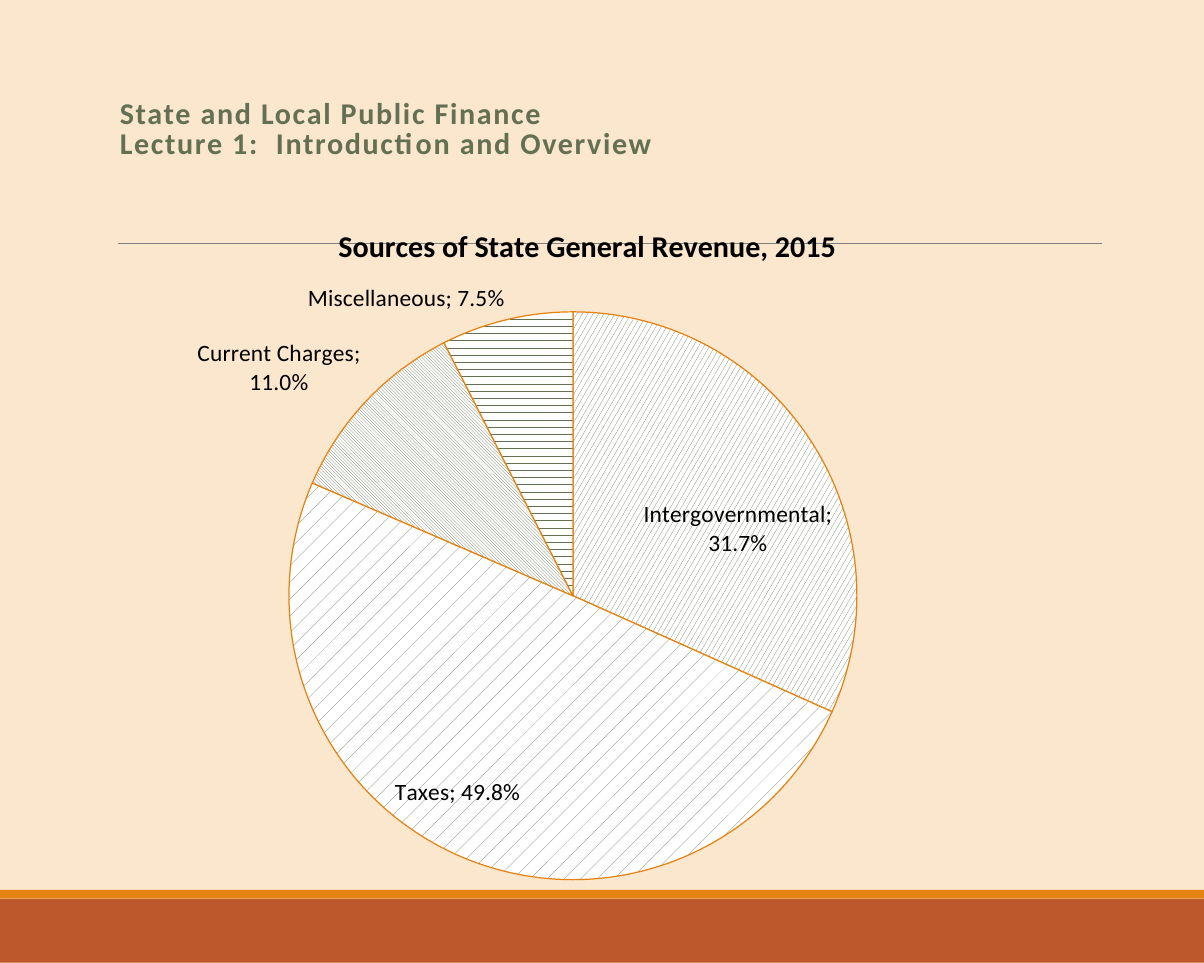
from pptx import Presentation
from pptx.chart.data import CategoryChartData
from pptx.dml.color import RGBColor
from pptx.enum.chart import XL_CHART_TYPE, XL_LABEL_POSITION
from pptx.enum.dml import MSO_PATTERN
from pptx.enum.shapes import MSO_CONNECTOR, MSO_SHAPE
from pptx.enum.text import MSO_ANCHOR
from pptx.oxml import parse_xml
from pptx.oxml.ns import nsdecls, qn
from pptx.util import Inches, Pt

PIE = XL_CHART_TYPE.PIE
OUTSIDE = XL_LABEL_POSITION.OUTSIDE_END
STRAIGHT = MSO_CONNECTOR.STRAIGHT
RECT = MSO_SHAPE.RECTANGLE
BOTTOM = MSO_ANCHOR.BOTTOM

EMU_PER_PX = 914400 / 120.4
WIDTH, HEIGHT = 1204, 963
GREEN, ORANGE, RUST = "637052", "E48312", "BD582C"

# category, share, pattern, label offset from the slice centre (None: outside)
SLICES = [
    ("Intergovernmental", 0.317, MSO_PATTERN.LARGE_CONFETTI, (46, 10)),
    ("Taxes", 0.498, MSO_PATTERN.PERCENT_5, (-58, 67)),
    ("Current Charges", 0.11, MSO_PATTERN.DARK_DOWNWARD_DIAGONAL, None),
    ("Miscellaneous", 0.075, MSO_PATTERN.DASHED_HORIZONTAL, None),
]


def px(n):
    return round(n * EMU_PER_PX)


def rgb(value):
    return RGBColor.from_string(value)


def layout_xml(**values):
    """Manual chart layout; keywords are the c: element names, in schema order."""
    items = "".join(f'<c:{k} val="{v}"/>' for k, v in values.items())
    return f'<c:layout {nsdecls("c")}><c:manualLayout>{items}</c:manualLayout></c:layout>'


def set_layout(parent, index, **values):
    for old in parent.findall(qn("c:layout")):
        parent.remove(old)
    parent.insert(index, parse_xml(layout_xml(**values)))


class Deck:
    def __init__(self, slide, font):
        self.slide = slide
        self.font = font

    def background(self, color):
        fill = self.slide.background.fill
        fill.solid()
        fill.fore_color.rgb = rgb(color)

    def band(self, x, y, w, h, color):
        s = self.slide.shapes.add_shape(RECT, px(x), px(y), px(w), px(h))
        s.shadow.inherit = False
        s.fill.solid()
        s.fill.fore_color.rgb = rgb(color)
        s.line.fill.background()

    def rule(self, x1, x2, y, color, width):
        s = self.slide.shapes.add_connector(STRAIGHT, px(x1), px(y), px(x2), px(y))
        s.line.color.rgb = rgb(color)
        s.line.width = Pt(width)
        s._element.spPr.append(parse_xml(f'<a:effectLst {nsdecls("a")}/>'))

    def style(self, font, size, color, bold=False):
        font.name = self.font
        font.size = Pt(size)
        font.bold = bold
        font.color.rgb = rgb(color)

    def heading(self, x, y, w, h, text, size, color):
        tf = self.slide.shapes.add_textbox(px(x), px(y), px(w), px(h)).text_frame
        tf.word_wrap = True
        tf.vertical_anchor = BOTTOM
        p = tf.paragraphs[0]
        p.text = text
        p.line_spacing = 0.85
        for r in p.runs:
            self.style(r.font, size, color, bold=True)
            r.font._element.set("spc", "100")

    def pie(self, x, y, w, h, title, slices, title_at, plot_box):
        """Pie chart; title_at and plot_box are slide positions in px."""
        data = CategoryChartData(number_format="0.0%")
        data.categories = [name for name, *_ in slices]
        data.add_series("Series 1", [share for _, share, *_ in slices])
        frame = self.slide.shapes.add_chart(PIE, px(x), px(y), px(w), px(h), data)
        chart = frame.chart
        self.style(chart.font, 10, "000000")
        chart.has_legend = False

        chart.has_title = True
        tf = chart.chart_title.text_frame
        tf.text = title
        self.style(tf.paragraphs[0].runs[0].font, 18, "000000", bold=True)
        tx, ty = title_at
        set_layout(chart.chart_title._element, 1, xMode="edge", yMode="edge",
                   x=round((tx - x) / w, 4), y=round((ty - y) / h, 4))

        bx, by, bw, bh = plot_box
        plot_area = chart._chartSpace.chart.plotArea
        set_layout(plot_area, 0, layoutTarget="inner", xMode="edge", yMode="edge",
                   x=round((bx - x) / w, 4), y=round((by - y) / h, 4),
                   w=round(bw / w, 4), h=round(bh / h, 4))

        series = chart.plots[0].series[0]
        labels = series.data_labels
        self.style(labels.font, 14, "000000")
        labels.number_format = "0.0%"
        labels.number_format_is_linked = False
        labels.position = OUTSIDE
        labels.show_value = labels.show_category_name = True
        labels.show_percentage = labels.show_legend_key = False

        moved = 0
        for i, (_, _, pattern, offset) in enumerate(slices):
            fmt = series.points[i].format
            fmt.fill.patterned()
            fmt.fill.pattern = pattern
            fmt.fill.fore_color.rgb = rgb(GREEN)
            fmt.fill.back_color.rgb = rgb("FFFFFF")
            fmt.line.color.rgb = rgb(ORANGE)
            fmt.line.width = Pt(0.75)
            if offset:
                dx, dy = offset
                label = self.moved_label(i, round(dx / w, 4), round(dy / h, 4))
                labels._element.insert(moved, label)
                moved += 1

    def moved_label(self, index, dx, dy):
        """Label centred in its slice, then shifted by fractions of the chart."""
        return parse_xml(
            f'<c:dLbl {nsdecls("c", "a")}><c:idx val="{index}"/>'
            f'{layout_xml(x=dx, y=dy)}'
            '<c:numFmt formatCode="0.0%" sourceLinked="0"/><c:spPr/>'
            '<c:txPr><a:bodyPr/><a:p><a:pPr><a:defRPr sz="1400" b="0">'
            '<a:solidFill><a:srgbClr val="000000"/></a:solidFill>'
            f'<a:latin typeface="{self.font}"/></a:defRPr></a:pPr></a:p></c:txPr>'
            '<c:dLblPos val="ctr"/><c:showLegendKey val="0"/><c:showVal val="1"/>'
            '<c:showCatName val="1"/><c:showSerName val="0"/><c:showPercent val="0"/>'
            '<c:showBubbleSize val="0"/></c:dLbl>')


def main():
    prs = Presentation()
    prs.slide_width, prs.slide_height = Inches(10), Inches(8)
    deck = Deck(prs.slides.add_slide(prs.slide_layouts[6]), "Calibri")
    deck.background("FBE6CE")
    deck.band(0, 899, WIDTH, HEIGHT - 899, RUST)
    deck.band(0, 890, WIDTH, 9, ORANGE)
    deck.rule(118, 1102, 244, "808080", 0.5)
    deck.heading(108, 40, 993, 127,
                 "State and Local Public Finance\vLecture 1:  Introduction and Overview",
                 18, GREEN)
    deck.pie(31, 188, 1102, 708, "Sources of State General Revenue, 2015", SLICES,
             title_at=(333, 220), plot_box=(289, 312, 568, 568))
    prs.save("out.pptx")


if __name__ == "__main__":
    main()
